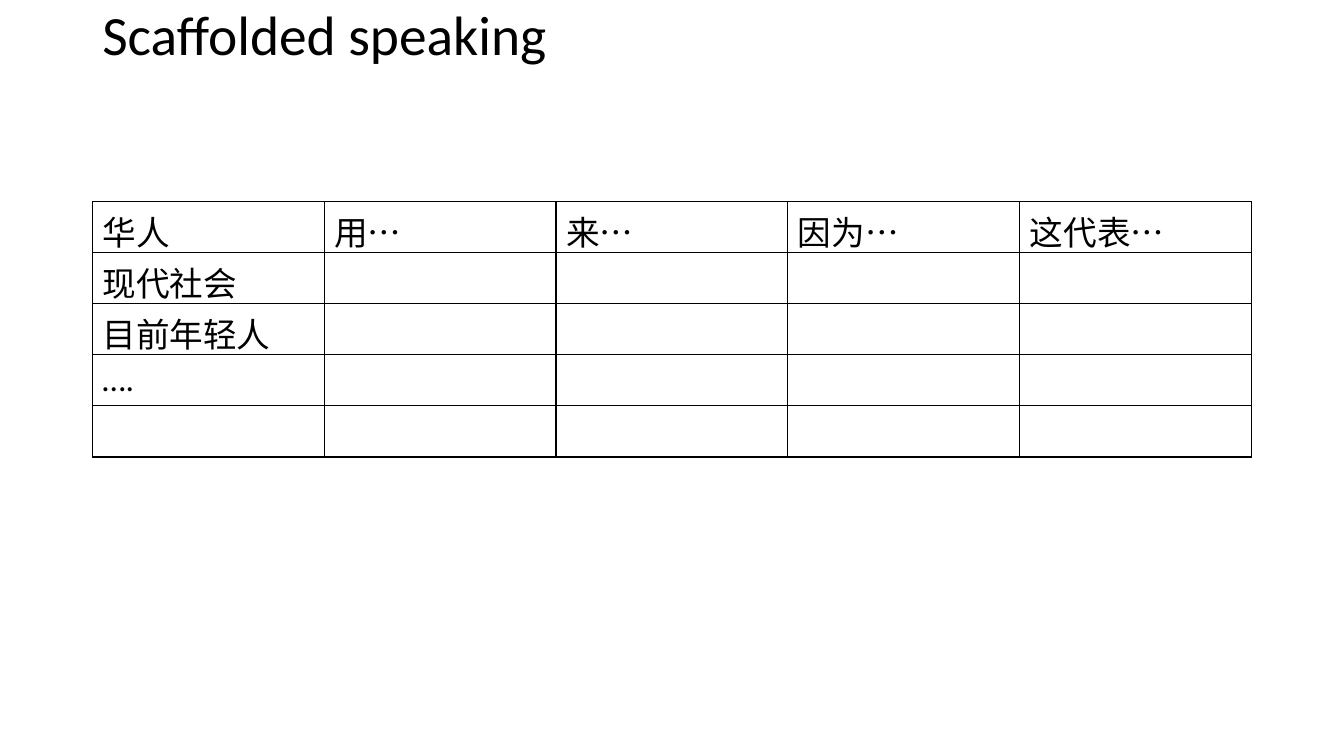
from dataclasses import dataclass

from lxml.etree import SubElement
from pptx import Presentation
from pptx.dml.color import RGBColor
from pptx.enum.text import MSO_ANCHOR as Anchor
from pptx.oxml.ns import qn
from pptx.util import Pt


@dataclass(frozen=True)
class Theme:
    font: str = "Calibri"
    ink: str = "000000"
    title_size: float = 39.6
    cell_size: float = 24
    border: float = 1


THEME = Theme()

LEFT, WIDTH = 66, 828
TABLE_TOP, ROW_HEIGHT = 144, 36.5

HEADINGS = ["华人", "用…", "来…", "因为…", "这代表…"]
TOPICS = ["现代社会", "目前年轻人", "….", ""]


def write(frame, text, *, size, line_spacing=None):
    """Put one formatted paragraph into a text frame."""
    para = frame.paragraphs[0]
    if line_spacing:
        para.line_spacing = line_spacing
    span = para.add_run()
    span.text = text
    span.font.name = THEME.font
    span.font.size = Pt(size)
    span.font.bold = False
    span.font.color.rgb = RGBColor.from_string(THEME.ink)


def add_title(page, text):
    box = page.shapes.add_textbox(Pt(LEFT), Pt(9.5), Pt(WIDTH), Pt(34.5))
    frame = box.text_frame
    frame.word_wrap = True
    frame.vertical_anchor = Anchor.MIDDLE
    write(frame, text, size=THEME.title_size, line_spacing=0.9)


def outline(cell):
    """Draw a solid border on all four sides of a cell."""
    properties = cell._tc.get_or_add_tcPr()
    for side in ("a:lnL", "a:lnR", "a:lnT", "a:lnB"):
        line = SubElement(properties, qn(side), w=str(Pt(THEME.border)))
        fill = SubElement(line, qn("a:solidFill"))
        SubElement(fill, qn("a:srgbClr"), val=THEME.ink)


def add_grid(page, rows):
    count = len(rows[0])
    table = page.shapes.add_table(
        len(rows), count, Pt(LEFT), Pt(TABLE_TOP),
        Pt(WIDTH), Pt(ROW_HEIGHT * len(rows)),
    ).table
    table.first_row = table.horz_banding = False
    for column in table.columns:
        column.width = Pt(WIDTH / count)
    for row, texts in zip(table.rows, rows):
        row.height = Pt(ROW_HEIGHT)
        for cell, text in zip(row.cells, texts):
            outline(cell)
            cell.fill.background()
            if text:
                write(cell.text_frame, text, size=THEME.cell_size)


def main():
    deck = Presentation()
    deck.slide_width, deck.slide_height = Pt(960), Pt(540)
    page = deck.slides.add_slide(deck.slide_layouts[6])

    # Heading
    add_title(page, "Scaffolded speaking")

    # Sentence frame: headings, then one row to fill in per topic
    blanks = [""] * (len(HEADINGS) - 1)
    add_grid(page, [HEADINGS] + [[topic] + blanks for topic in TOPICS])

    deck.save("out.pptx")


if __name__ == "__main__":
    main()
